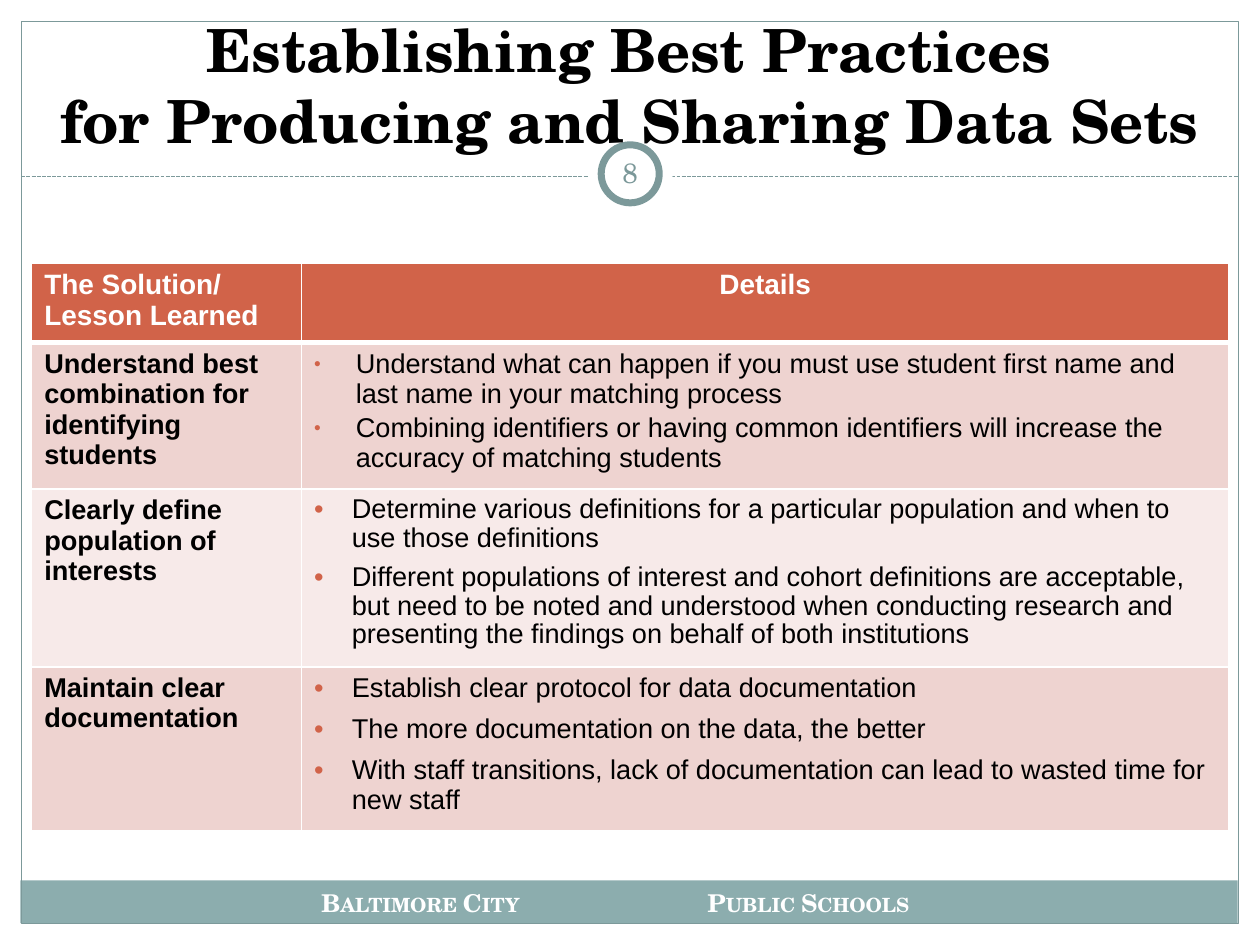
from dataclasses import dataclass

from lxml.etree import SubElement
from pptx import Presentation
from pptx.dml.color import RGBColor
from pptx.enum.dml import MSO_LINE
from pptx.enum.shapes import MSO_CONNECTOR, MSO_SHAPE
from pptx.enum.text import MSO_ANCHOR, PP_ALIGN
from pptx.oxml.ns import qn
from pptx.util import Cm, Pt

WHITE = RGBColor(0xFF, 0xFF, 0xFF)
BLACK = RGBColor(0, 0, 0)
TEAL = RGBColor(0x7C, 0x99, 0x9A)
NUMBER_TEAL = RGBColor(0x7B, 0x98, 0x99)
FOOTER_TEAL = RGBColor(0x8C, 0xAD, 0xAE)
RUST = RGBColor(0xD1, 0x63, 0x49)
ROSE = RGBColor(0xEE, 0xD3, 0xD0)
PALE_ROSE = RGBColor(0xF7, 0xEA, 0xE9)
SERIF = "TeX Gyre Schola"
SANS = "Arial"


@dataclass(frozen=True)
class Bullets:
    indent: float
    gap: float
    percent: int = 100
    line_spacing: float | None = None


@dataclass(frozen=True)
class Lesson:
    name: str
    details: list[str]
    bullets: Bullets
    fill: RGBColor
    height: float


LESSONS = [
    Lesson("Understand best combination for identifying students",
           ["Understand what can happen if you must use student first name and "
            "last name in your matching process",
            "Combining identifiers or having common identifiers will increase the "
            "accuracy of matching students"],
           Bullets(0.84, 2, percent=70), ROSE, 2.76),
    Lesson("Clearly define population of interests",
           ["Determine various definitions for a particular population and when to "
            "use those definitions",
            "Different populations of interest and cohort definitions are acceptable, "
            "but need to be noted and understood when conducting research and "
            "presenting the findings on behalf of both institutions"],
           Bullets(0.76, 6, line_spacing=0.95), PALE_ROSE, 3.37),
    Lesson("Maintain clear documentation",
           ["Establish clear protocol for data documentation",
            "The more documentation on the data, the better",
            "With staff transitions, lack of documentation can lead to wasted time "
            "for new staff"],
           Bullets(0.76, 6), ROSE, 3.12),
]


def write(p, text: str, *, size: float, color: RGBColor, font: str = SANS,
          bold: bool = False, align=PP_ALIGN.LEFT, small_caps: bool = False) -> None:
    p.alignment = align
    for i, line in enumerate(text.split("\n")):
        if i:
            p.add_line_break()
        r = p.add_run()
        r.text = line
        r.font.name, r.font.size, r.font.bold = font, Pt(size), bold
        r.font.color.rgb = color
        if small_caps:
            r.font._element.set("cap", "small")


def add_text(slide, left: float, top: float, width: float, height: float,
             text: str, *, anchor=MSO_ANCHOR.TOP, **style) -> None:
    tf = slide.shapes.add_textbox(Cm(left), Cm(top), Cm(width), Cm(height)).text_frame
    tf.word_wrap = True
    tf.vertical_anchor = anchor
    write(tf.paragraphs[0], text, font=SERIF, align=PP_ALIGN.CENTER, **style)


def add_panel(slide, kind, left: float, top: float, width: float, height: float, *,
              fill: RGBColor | None = None, line: float = 0) -> None:
    sp = slide.shapes.add_shape(kind, Cm(left), Cm(top), Cm(width), Cm(height))
    sp.shadow.inherit = False
    if fill is None:
        sp.fill.background()
    else:
        sp.fill.solid()
        sp.fill.fore_color.rgb = fill
    if line:
        sp.line.color.rgb = TEAL
        sp.line.width = Pt(line)
    else:
        sp.line.fill.background()


def add_divider(slide, left: float, right: float, y: float) -> None:
    line = slide.shapes.add_connector(MSO_CONNECTOR.STRAIGHT,
                                      Cm(left), Cm(y), Cm(right), Cm(y))
    line.line.color.rgb = TEAL
    line.line.width = Pt(0.75)
    line.line.dash_style = MSO_LINE.SQUARE_DOT
    SubElement(line._element.spPr, qn("a:effectLst"))


def set_bullet(p, bullets: Bullets) -> None:
    pPr = p._p.get_or_add_pPr()
    pPr.set("marL", str(Cm(bullets.indent)))
    pPr.set("indent", str(-Cm(bullets.indent)))
    color = SubElement(pPr, qn("a:buClr"))
    SubElement(color, qn("a:srgbClr"), val=str(RUST))
    SubElement(pPr, qn("a:buSzPct"), val=str(bullets.percent * 1000))
    SubElement(pPr, qn("a:buFont"), typeface=SANS)
    SubElement(pPr, qn("a:buChar"), char="•")


def style_cell(cell, fill: RGBColor, top: float = 1, bottom: float = 1) -> None:
    """Give the cell white borders and a plain fill; widths are in points."""
    tcPr = cell._tc.get_or_add_tcPr()
    for side, width in (("L", 1), ("R", 1), ("T", top), ("B", bottom)):
        ln = SubElement(tcPr, qn(f"a:ln{side}"), w=str(Pt(width)))
        solid = SubElement(ln, qn("a:solidFill"))
        SubElement(solid, qn("a:srgbClr"), val=str(WHITE))
    cell.fill.solid()
    cell.fill.fore_color.rgb = fill


def add_lessons_table(slide, left: float, top: float, widths: tuple[float, float],
                      header_height: float) -> None:
    heights = [header_height] + [lesson.height for lesson in LESSONS]
    table = slide.shapes.add_table(len(heights), len(widths), Cm(left), Cm(top),
                                   Cm(sum(widths)), Cm(sum(heights))).table
    table.horz_banding = False
    for column, width in zip(table.columns, widths):
        column.width = Cm(width)
    for row, height in zip(table.rows, heights):
        row.height = Cm(height)

    headers = (("The Solution/ Lesson Learned", PP_ALIGN.LEFT),
               ("Details", PP_ALIGN.CENTER))
    for col, (text, align) in enumerate(headers):
        cell = table.cell(0, col)
        style_cell(cell, RUST, bottom=3)
        write(cell.text_frame.paragraphs[0], text, size=16, color=WHITE,
              bold=True, align=align)

    for row, lesson in enumerate(LESSONS, start=1):
        name, details = table.cell(row, 0), table.cell(row, 1)
        for cell in (name, details):
            style_cell(cell, lesson.fill, top=3 if row == 1 else 1)
        write(name.text_frame.paragraphs[0], lesson.name, size=15.5,
              color=BLACK, bold=True)
        tf = details.text_frame
        for i, text in enumerate(lesson.details):
            p = tf.add_paragraph() if i else tf.paragraphs[0]
            set_bullet(p, lesson.bullets)
            if i:
                p.space_before = Pt(lesson.bullets.gap)
            if lesson.bullets.line_spacing:
                p.line_spacing = lesson.bullets.line_spacing
            write(p, text, size=15.5, color=BLACK)


def main() -> None:
    prs = Presentation()
    prs.slide_width, prs.slide_height = Cm(25.4), Cm(19.05)
    slide = prs.slides.add_slide(prs.slide_layouts[6])

    add_panel(slide, MSO_SHAPE.RECTANGLE, 0.41, 17.75, 24.54, 0.86, fill=FOOTER_TEAL)
    add_panel(slide, MSO_SHAPE.RECTANGLE, 0.43, 0.43, 24.54, 18.19, line=0.75)
    add_divider(slide, 0.43, 24.97, 3.56)
    add_panel(slide, MSO_SHAPE.OVAL, 11.86, 2.67, 1.7, 1.7, fill=WHITE)
    add_panel(slide, MSO_SHAPE.OVAL, 12.12, 2.92, 1.17, 1.17, fill=WHITE, line=4)

    for left, text in ((6.15, "Baltimore City"), (13.97, "Public Schools")):
        add_text(slide, left, 17.78, 4.65, 0.74, text, size=14, color=WHITE,
                 bold=True, small_caps=True)
    add_text(slide, 0.84, 0.64, 23.7, 2.11,
             "Establishing Best Practices\nfor Producing and Sharing Data Sets",
             anchor=MSO_ANCHOR.MIDDLE, size=34, color=BLACK, bold=True)
    add_text(slide, 12.07, 2.87, 1.27, 1.22, "8", anchor=MSO_ANCHOR.MIDDLE,
             size=16, color=NUMBER_TEAL)
    add_lessons_table(slide, 0.64, 5.3, (5.44, 18.69), 1.49)

    prs.save("out.pptx")


if __name__ == "__main__":
    main()
